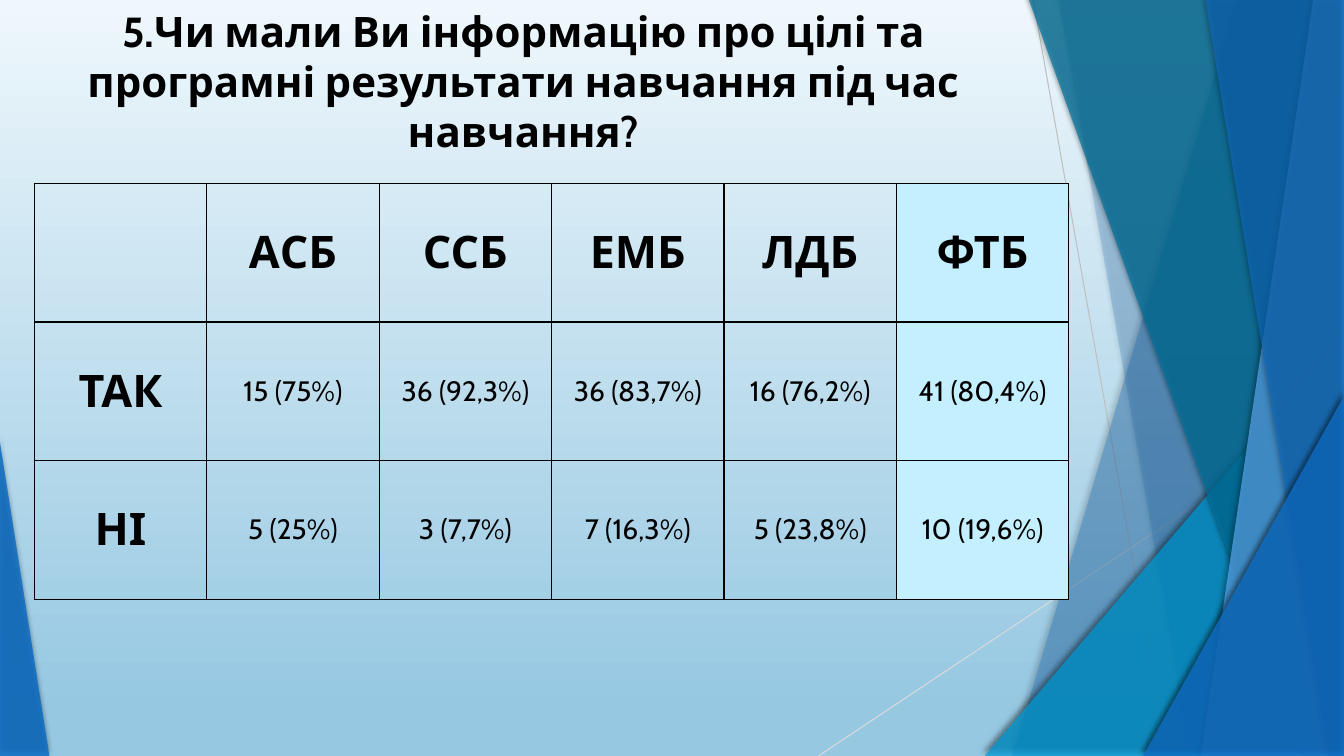
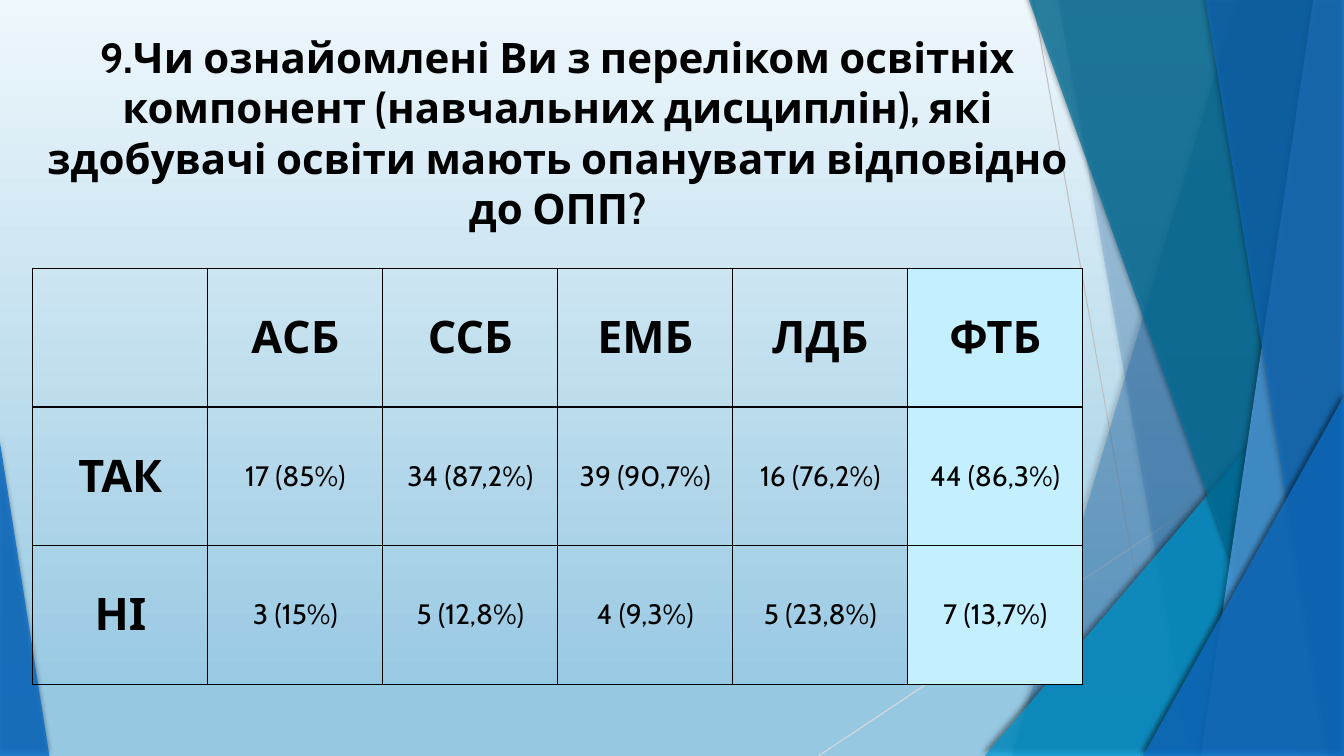
import dataclasses
import pptx
import pptx.util
import pptx.dml.color
import pptx.enum.shapes
import pptx.enum.text
import pptx.oxml
import pptx.oxml.ns
import lxml.etree

Pt = pptx.util.Pt
qn = pptx.oxml.ns.qn
kinds = pptx.enum.shapes
texts = pptx.enum.text


@dataclasses.dataclass(frozen=True)
class Theme:
    wide: float = 960
    high: float = 540
    font: str = "Cabin"
    ink: str = "000000"
    low: str = "96C8E2"
    top: str = "EEF7FC"
    blue: str = "0F6FC6"
    cyan: str = "009DD9"
    teal: str = "0076A3"
    sky: str = "59AAF2"
    mark: str = "C4EFFF"
    rays: tuple = ("BFBFBF", "D9D9D9")
    title: float = 30
    head: float = 32
    body: float = 20
    ray: float = 0.75
    rule: float = 0.96


theme = Theme()


def tint(code):
    return pptx.dml.color.RGBColor.from_string(code)


def add(node, tag, **attrs):
    """Append a drawing element with the given attributes."""
    return lxml.etree.SubElement(node, qn("a:" + tag), {k: str(v) for k, v in attrs.items()})


def style(para, size, bold):
    para.alignment = texts.PP_ALIGN.CENTER
    para.font.name = theme.font
    para.font.size = Pt(size)
    para.font.bold = bold
    para.font.color.rgb = tint(theme.ink)


# Background shared by all slides

def paint(shape, code, alpha):
    """Give a facet its clear fill and soft shadow."""
    shape.fill.solid()
    shape.fill.fore_color.rgb = tint(code)
    shape.line.fill.background()
    shape.shadow.inherit = False
    props = shape.element.spPr
    add(props.find(".//" + qn("a:srgbClr")), "alpha", val=alpha * 1000)
    cast = add(props.find(qn("a:effectLst")), "outerShdw", blurRad=Pt(4), dist=Pt(3),
               dir=245 * 60000, algn="ctr", rotWithShape=0)
    add(add(cast, "srgbClr", val=theme.ink), "alpha", val=60000)


def ray(shapes, ends, code):
    line = shapes.add_connector(kinds.MSO_CONNECTOR.STRAIGHT, *map(Pt, ends))
    line.line.color.rgb = tint(code)
    line.line.width = Pt(theme.ray)
    add(line.element.spPr, "effectLst")


def band(shapes, box, upper, lower, code, alpha):
    """A facet from a slanted left edge to the right side of the box."""
    left, top, wide, high = box
    right, base = left + wide, top + high
    pen = shapes.build_freeform(Pt(left + upper), Pt(top))
    pen.add_line_segments([(Pt(right), Pt(top)), (Pt(right), Pt(base)),
                           (Pt(left + lower), Pt(base))])
    paint(pen.convert_to_shape(), code, alpha)


def wedge(shapes, box, start, wide, tall, apex, code, alpha):
    """A right triangle that stands on the base of the box."""
    left, top, _, high = box
    shape = shapes.add_shape(kinds.MSO_SHAPE.ISOSCELES_TRIANGLE, Pt(left + start),
                             Pt(top + high - tall), Pt(wide), Pt(tall))
    shape.adjustments[0] = apex
    paint(shape, code, alpha)


def facets(shapes, box):
    left, top, wide, high = box
    right, base = left + wide, top + high
    group = shapes.add_group_shape()
    parts = group.shapes
    ray(parts, (left + 738, top, left + 834, base), theme.rays[0])
    ray(parts, (right, top + 290, left + 584.6, base), theme.rays[1])
    band(parts, box, 884, 723, theme.blue, 30)
    band(parts, box, 756, 851, theme.blue, 20)
    wedge(parts, box, 703.4, 256.6, 300.2, 1, theme.cyan, 72)
    band(parts, box, 735, 929.5, theme.teal, 70)
    band(parts, box, 938, 858, theme.sky, 70)
    band(parts, box, 861, 949, theme.blue, 65)
    wedge(parts, box, 816.5, 143.5, 257, 1, theme.blue, 80)
    wedge(parts, box, 0, 35.3, 224, 0, theme.blue, 85)
    return group


def backdrop(master, slide):
    """Set the gradient and move the facets to the master."""
    fill = master.background.fill
    fill.gradient()
    fill.gradient_angle = 90
    for stop, code, place in zip(fill.gradient_stops, (theme.low, theme.top), (0.06, 1)):
        stop.color.rgb = tint(code)
        stop.position = place
    group = facets(slide.shapes, (0, 0, theme.wide, theme.high)).element
    for num, node in enumerate(group.iter(qn("p:cNvPr")), 100):
        node.set("id", str(num))
    master.shapes.element.insert(2, group)


# Parts of a survey slide

def heading(slide, box, words):
    title = slide.shapes.title
    title.left, title.top, title.width, title.height = map(Pt, box)
    frame = title.text_frame
    frame.text = words
    frame.word_wrap = True
    frame.auto_size = texts.MSO_AUTO_SIZE.NONE
    frame.vertical_anchor = texts.MSO_ANCHOR.TOP
    style(frame.paragraphs[0], theme.title, True)


def borders(props):
    for spot, side in enumerate(("lnL", "lnR", "lnT", "lnB")):
        line = add(props, side, w=Pt(theme.rule))
        add(add(line, "solidFill"), "srgbClr", val=theme.ink)
        props.insert(spot, line)


def answers(slide, box, rows):
    """A grid of answers with the last column marked."""
    count = len(rows[0])
    frame = slide.shapes.add_table(len(rows), count, *map(Pt, box))
    grid = frame.table
    grid.first_row = grid.horz_banding = False
    for col in grid.columns:
        col.width = Pt(box[2] / count)
    for row in grid.rows:
        row.height = Pt(box[3] / len(rows))
    for r, row in enumerate(rows):
        for c, words in enumerate(row):
            cell = grid.cell(r, c)
            cell.vertical_anchor = texts.MSO_ANCHOR.MIDDLE
            if c == count - 1:
                cell.fill.solid()
                cell.fill.fore_color.rgb = tint(theme.mark)
            else:
                cell.fill.background()
            if words:
                cell.text = words
                label = r == 0 or c == 0
                style(cell.text_frame.paragraphs[0], theme.head if label else theme.body, label)
    for props in frame.element.iter(qn("a:tcPr")):
        borders(props)


def survey(deck, words, area, place, yes, no):
    slide = deck.slides.add_slide(deck.slide_layouts[5])
    heading(slide, area, words)
    answers(slide, place, [HEADS, ("ТАК", *yes), ("НІ", *no)])
    return slide


HEADS = ("", "АСБ", "ССБ", "ЕМБ", "ЛДБ", "ФТБ")

# Question, title box, table box, yes row, no row
PAGES = [
    ("5.Чи мали Ви інформацію про цілі та програмні результати навчання під час навчання?",
     (18, 0, 712, 152), (24.5, 131, 739, 297),
     ("15 (75%)", "36 (92,3%)", "36 (83,7%)", "16 (76,2%)", "41 (80,4%)"),
     ("5 (25%)", "3 (7,7%)", "7 (16,3%)", "5 (23,8%)", "10 (19,6%)")),
    ("9.Чи ознайомлені Ви з переліком освітніх компонент (навчальних дисциплін), "
     "які здобувачі освіти мають опанувати відповідно до ОПП?",
     (23.5, 18.7, 750, 134), (23.5, 191.7, 750, 297),
     ("17 (85%)", "34 (87,2%)", "39 (90,7%)", "16 (76,2%)", "44 (86,3%)"),
     ("3 (15%)", "5 (12,8%)", "4 (9,3%)", "5 (23,8%)", "7 (13,7%)")),
]


def main():
    deck = pptx.Presentation()
    deck.slide_width, deck.slide_height = Pt(theme.wide), Pt(theme.high)
    slides = [survey(deck, *page) for page in PAGES]
    backdrop(deck.slide_master, slides[0])
    deck.save("out.pptx")


if __name__ == "__main__":
    main()
